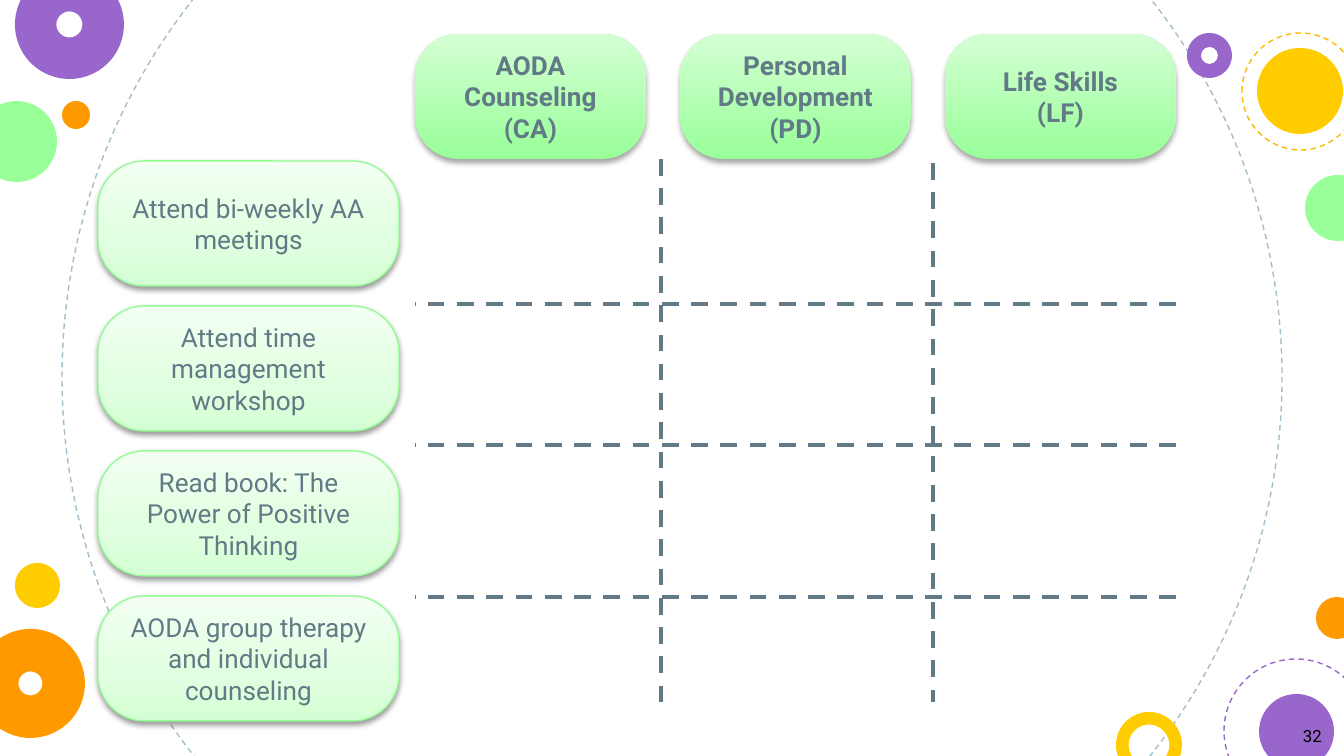
from dataclasses import dataclass
from typing import Any, Optional

import lxml.etree
import pptx
import pptx.dml.color
import pptx.enum.dml
import pptx.enum.shapes
import pptx.enum.text
import pptx.oxml.ns
import pptx.util

SCALE = 914400 / 134.4  # EMU in one px
COLORS = {
    "white": "FFFFFF", "black": "000000", "slate": "617A86", "mist": "A1BECC",
    "green": "99FF99", "edge": "93FC93", "yellow": "FFCC00", "gold": "F8BB00",
    "purple": "9966CC", "orange": "FF9900",
}
FONT = "Roboto"
KIND = pptx.enum.shapes.MSO_SHAPE
ALIGN = pptx.enum.text.PP_ALIGN


@dataclass
class Dot:
    left: int
    top: int
    size: int
    color: str
    hole: Optional[float] = None  # ring thickness of a donut
    dashed: bool = False


@dataclass
class Look:
    stops: list[tuple[int, str]]
    alpha: int
    dist: float
    bold: bool = False
    edge: Optional[str] = None


@dataclass
class Pill:
    left: int
    top: int
    width: int
    round: float
    text: str
    look: Look


def px(value: int) -> int:
    return round(value * SCALE)


def rgb(name: str) -> pptx.dml.color.RGBColor:
    return pptx.dml.color.RGBColor.from_string(COLORS[name])


def node(parent: Any, tag: str, **attrs: Any) -> Any:
    return lxml.etree.SubElement(parent, pptx.oxml.ns.qn(tag),
                                 {key: str(val) for key, val in attrs.items()})


def dash(line: Any, color: str, width: float) -> None:
    line.color.rgb = rgb(color)
    line.width = pptx.util.Pt(width)
    line.dash_style = pptx.enum.dml.MSO_LINE.DASH


def write(shape: Any, text: str, *, size: int, color: str,
          bold: bool = False, align: Any = ALIGN.CENTER) -> None:
    frame = shape.text_frame
    frame.word_wrap = True
    frame.vertical_anchor = pptx.enum.text.MSO_ANCHOR.MIDDLE
    frame.text = text
    for para in frame.paragraphs:
        para.alignment = align
        para.font.name = FONT
        para.font.size = pptx.util.Pt(size)
        para.font.bold = bold
        para.font.color.rgb = rgb(color)


def draw_dot(slide: Any, dot: Dot) -> None:
    kind = KIND.OVAL if dot.hole is None else KIND.DONUT
    shape = slide.shapes.add_shape(kind, px(dot.left), px(dot.top),
                                   px(dot.size), px(dot.size))
    shape.shadow.inherit = False
    if dot.hole is not None:
        shape.adjustments[0] = dot.hole
    if dot.dashed:
        shape.fill.background()
        dash(shape.line, dot.color, 0.75)
    else:
        shape.fill.solid()
        shape.fill.fore_color.rgb = rgb(dot.color)
        shape.line.fill.background()


def draw_pill(slide: Any, pill: Pill) -> None:
    look = pill.look
    shape = slide.shapes.add_shape(KIND.ROUNDED_RECTANGLE, px(pill.left),
                                   px(pill.top), px(pill.width), px(HIGH))
    shape.adjustments[0] = pill.round

    # Gradient running from the bottom up
    shape.fill.gradient()
    shape.fill.gradient_angle = 90
    props = shape._element.spPr
    stops = props.find(".//" + pptx.oxml.ns.qn("a:gsLst"))
    stops.clear()
    for pos, color in look.stops:
        node(node(stops, "a:gs", pos=pos * 1000), "a:srgbClr", val=color)

    if look.edge:
        shape.line.color.rgb = rgb(look.edge)
        shape.line.width = pptx.util.Pt(0.75)
    else:
        shape.line.fill.background()

    # Soft shadow below
    shape.shadow.inherit = False
    drop = node(props.find(pptx.oxml.ns.qn("a:effectLst")), "a:outerShdw",
                blurRad=pptx.util.Pt(3.1), dist=pptx.util.Pt(look.dist),
                dir=5400000, rotWithShape=0)
    shade = node(drop, "a:srgbClr", val=COLORS["black"])
    node(shade, "a:alpha", val=look.alpha * 1000)

    write(shape, pill.text, size=14, color="slate", bold=look.bold)


def draw_rule(slide: Any, x1: int, y1: int, x2: int, y2: int) -> None:
    rule = slide.shapes.add_connector(pptx.enum.shapes.MSO_CONNECTOR.STRAIGHT,
                                      px(x1), px(y1), px(x2), px(y2))
    dash(rule.line, "slate", 2.25)
    node(rule._element.spPr, "a:effectLst")


HIGH = 125  # height of every pill
HEAD = Look([(0, "99FF99"), (100, "D4FFD4")], 35, 1.8, bold=True)
TASK = Look([(0, "D4FFD4"), (35, "E0FFE0"), (100, "F3FFF3")], 38, 1.6,
            edge="edge")
DOTS = [
    Dot(62, -233, 1220, "mist", dashed=True),
    Dot(-24, 101, 81, "green"),
    Dot(1116, 712, 66, "yellow", hole=0.19),
    Dot(15, -30, 109, "purple", hole=0.38),
    Dot(62, 101, 28, "orange"),
    Dot(1224, 659, 144, "purple", dashed=True),
    Dot(1316, 597, 42, "orange"),
    Dot(-24, 629, 109, "orange", hole=0.39),
    Dot(1259, 694, 75, "purple"),
    Dot(1187, 33, 45, "purple", hole=0.31),
    Dot(1257, 48, 86, "yellow"),
    Dot(1305, 175, 66, "green"),
    Dot(1242, 33, 117, "gold", dashed=True),
    Dot(15, 563, 45, "yellow"),
]
HEADS = ["AODA Counseling (CA)", "Personal Development (PD)",
         "Life Skills\n(LF)"]
TASKS = ["Attend bi-weekly AA meetings", "Attend time management workshop",
         "Read book: The Power of Positive Thinking",
         "AODA group therapy and individual counseling"]


def main() -> None:
    deck = pptx.Presentation()
    deck.slide_width, deck.slide_height = px(1344), px(756)
    slide = deck.slides.add_slide(deck.slide_layouts[6])
    slide.background.fill.solid()
    slide.background.fill.fore_color.rgb = rgb("white")

    # Circles around the edges
    for dot in DOTS:
        draw_dot(slide, dot)

    # Column heads and row tasks
    for col, text in enumerate(HEADS):
        draw_pill(slide, Pill(415 + 265 * col, 34, 231, 0.35, text, HEAD))
    for row, text in enumerate(TASKS):
        draw_pill(slide, Pill(98, 161 + 145 * row, 301, 0.37, text, TASK))

    # Grid rules
    for x, top, end in [(661, 159, 711), (933, 163, 702)]:
        draw_rule(slide, x, top, x, end)
    for y in (304, 445, 597):
        draw_rule(slide, 1176, y, 415, y)

    # Slide number
    box = slide.shapes.add_textbox(px(1273), px(716), px(62), px(40))
    write(box, "32", size=9, color="black", align=ALIGN.RIGHT)

    deck.save("out.pptx")


if __name__ == "__main__":
    main()
